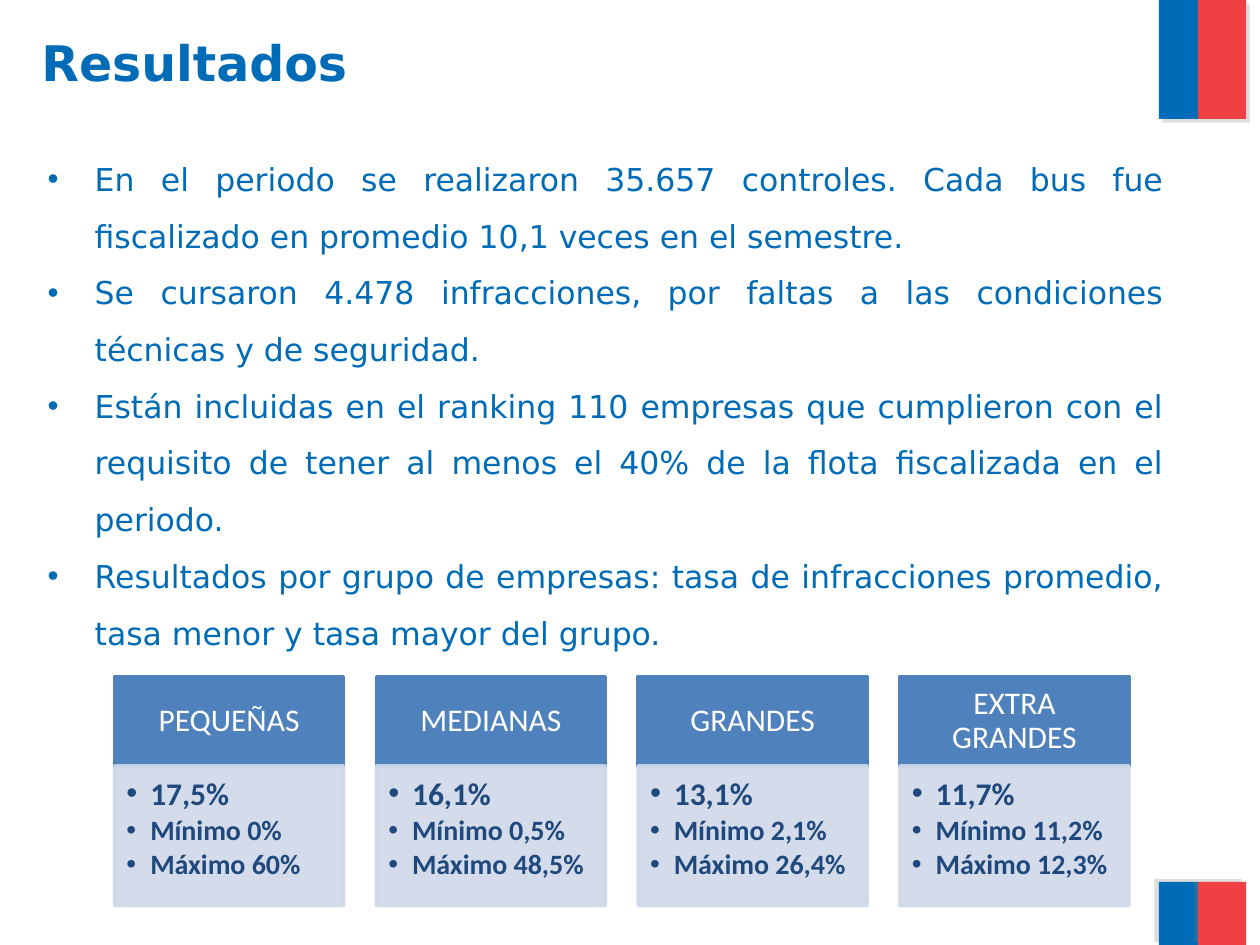
import pptx
import pptx.dml.color
import pptx.enum.shapes
import pptx.enum.text
import pptx.oxml
import pptx.oxml.ns
import pptx.util
from lxml import etree
from pptx.util import Cm

BLUE, RED = "006CB7", "EF4144"
HEADER, PANEL, NAVY, WHITE = "4F81BD", "D0D8E8", "1F497D", "FFFFFF"
ALIGN = pptx.enum.text.PP_ALIGN
ANCHOR = pptx.enum.text.MSO_ANCHOR

FINDINGS = [
    "En el periodo se realizaron 35.657 controles. Cada bus fue fiscalizado en promedio "
    "10,1 veces en el semestre.",
    "Se cursaron 4.478 infracciones, por faltas a las condiciones técnicas y de seguridad.",
    "Están incluidas en el ranking 110 empresas que cumplieron con el requisito de tener "
    "al menos el 40% de la flota fiscalizada en el periodo.",
    "Resultados por grupo de empresas: tasa de infracciones promedio, tasa menor y tasa "
    "mayor del grupo.",
]
# Group, average rate, lowest rate, highest rate
GROUPS = [
    ("PEQUEÑAS", "17,5%", "0%", "60%"),
    ("MEDIANAS", "16,1%", "0,5%", "48,5%"),
    ("GRANDES", "13,1%", "2,1%", "26,4%"),
    ("EXTRA GRANDES", "11,7%", "11,2%", "12,3%"),
]


def color(value):
    return pptx.dml.color.RGBColor.from_string(value)


def add_element(parent, tag, **attributes):
    child = etree.SubElement(parent, pptx.oxml.ns.qn(tag))
    for name, value in attributes.items():
        child.set(name, str(value))
    return child


def add_rectangle(page, left, top, width, height, fill, line=None):
    box = page.shapes.add_shape(
        pptx.enum.shapes.MSO_SHAPE.RECTANGLE, Cm(left), Cm(top), Cm(width), Cm(height))
    box.shadow.inherit = False
    box.fill.solid()
    box.fill.fore_color.rgb = color(fill)
    if line:
        box.line.color.rgb = color(line)
        box.line.width = pptx.util.Pt(2)
    else:
        box.line.fill.background()
    return box


def add_shadow(box, angle):
    effects = box.element.spPr.find(pptx.oxml.ns.qn("a:effectLst"))
    shadow = add_element(effects, "a:outerShdw", blurRad=0, dist=pptx.util.Pt(3),
                         dir=angle * 60000, algn="ctr", rotWithShape=0)
    shade = add_element(shadow, "a:srgbClr", val="808080")
    add_element(shade, "a:alpha", val=25000)


def make_translucent(box, percent):
    for shade in box.element.spPr.iter(pptx.oxml.ns.qn("a:srgbClr")):
        add_element(shade, "a:alpha", val=percent * 1000)


def set_insets(frame, left, top, right, bottom):
    frame.margin_left, frame.margin_top = Cm(left), Cm(top)
    frame.margin_right, frame.margin_bottom = Cm(right), Cm(bottom)


def format_para(para, font, size, fill, bold=False, align=ALIGN.LEFT,
                line_spacing=1.0, after=0, indent=0):
    para.alignment = align
    para.line_spacing = line_spacing
    para.space_before = pptx.util.Pt(0)
    para.space_after = pptx.util.Pt(after)
    if indent:
        properties = para._p.get_or_add_pPr()
        properties.set("marL", str(Cm(indent)))
        properties.set("indent", str(-Cm(indent)))
        add_element(properties, "a:buFont", typeface="Arial")
        add_element(properties, "a:buChar", char="•")
    for span in para.runs:
        span.font.name = font
        span.font.size = pptx.util.Pt(size)
        span.font.bold = bold
        span.font.color.rgb = color(fill)


def add_flag(page, left, top, height, shadow_angle):
    blue_width, red_width = 0.79, 0.97
    for offset, width, fill in ((0, blue_width, BLUE), (blue_width, red_width, RED)):
        stripe = add_rectangle(page, left + offset, top, width, height, fill)
        add_shadow(stripe, shadow_angle)


def add_title(page, left, top, width, height):
    title = page.shapes.title
    title.left, title.top, title.width, title.height = map(Cm, (left, top, width, height))
    frame = title.text_frame
    frame.text = "Resultados"
    frame.vertical_anchor = ANCHOR.TOP
    format_para(frame.paragraphs[0], "DejaVu Sans", 28, BLUE, bold=True)


def add_findings(page, left, top, width, height):
    box = add_rectangle(page, left, top, width, height, WHITE)
    frame = box.text_frame
    frame.word_wrap = True
    frame.vertical_anchor = ANCHOR.TOP
    frame.text = "\n".join(FINDINGS)
    for para in frame.paragraphs:
        format_para(para, "DejaVu Sans", 18, BLUE, align=ALIGN.JUSTIFY,
                    line_spacing=1.5, indent=0.95)


def add_group_card(page, left, top, width, height, group):
    name, average, lowest, highest = group
    header_height = 1.8

    # Header
    header = add_rectangle(page, left, top, width, header_height, HEADER, HEADER)
    frame = header.text_frame
    frame.word_wrap = True
    frame.vertical_anchor = ANCHOR.MIDDLE
    set_insets(frame, 0.36, 0.2, 0.36, 0.2)
    frame.text = name
    format_para(frame.paragraphs[0], "Calibri", 18, WHITE, align=ALIGN.CENTER,
                line_spacing=0.9)

    # Rates
    panel = add_rectangle(page, left, top + header_height, width,
                          height - header_height, PANEL, PANEL)
    make_translucent(panel, 90)
    frame = panel.text_frame
    frame.word_wrap = True
    frame.vertical_anchor = ANCHOR.TOP
    set_insets(frame, 0.24, 0.24, 0.3, 0.36)
    frame.text = f"{average}\nMínimo {lowest}\nMáximo {highest}"
    for para, size in zip(frame.paragraphs, (18, 16, 16)):
        format_para(para, "Calibri", size, NAVY, bold=True, line_spacing=0.9,
                    after=2.5, indent=0.48)


def add_group_cards(page, left, top, width, height):
    gap = 0.66
    card_width = (width - gap * (len(GROUPS) - 1)) / len(GROUPS)
    for index, group in enumerate(GROUPS):
        add_group_card(page, left + index * (card_width + gap), top,
                       card_width, height, group)


def main():
    deck = pptx.Presentation()
    deck.slide_width, deck.slide_height = Cm(25.4), Cm(19.05)
    page = deck.slides.add_slide(deck.slide_layouts[5])
    add_flag(page, 23.36, 0, 2.4, 45)
    add_flag(page, 23.36, 17.78, 1.27, 215)
    add_title(page, 0.58, 0.53, 22.6, 2)
    add_findings(page, 0.71, 2.72, 23, 11.8)
    add_group_cards(page, 2.31, 13.64, 20.45, 4.62)
    deck.save("out.pptx")


if __name__ == "__main__":
    main()
